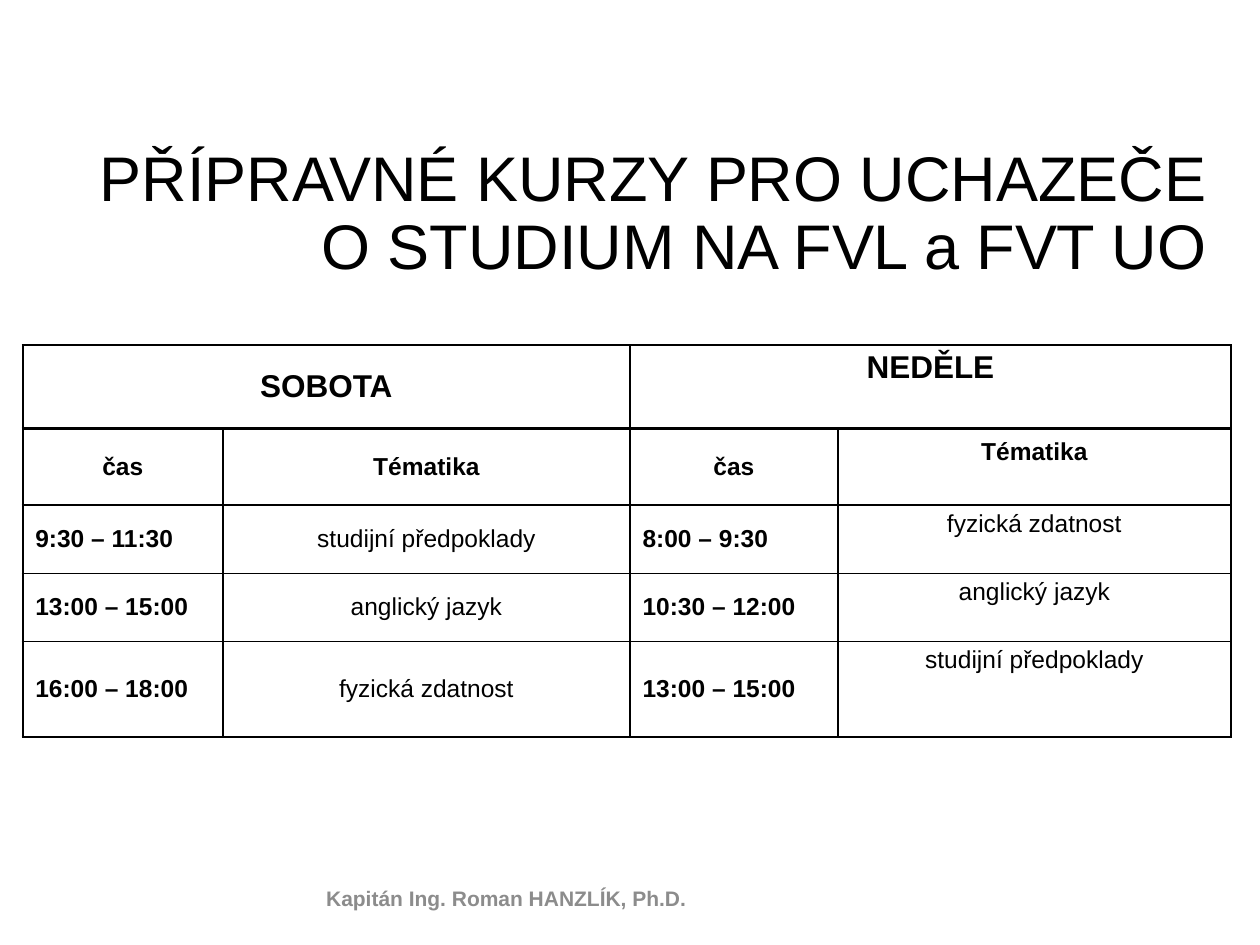
from lxml import etree
from pptx import Presentation
from pptx.dml.color import RGBColor
from pptx.enum import text
from pptx.oxml import ns
from pptx.util import Inches, Pt

FONT = "Arial"
BLACK = "000000"
COLUMNS = [1.59, 3.23, 1.65, 3.12]
ROWS = [0.66, 0.61, 0.54, 0.54, 0.76]
SCHEDULE = [
    ["SOBOTA", "", "NEDĚLE", ""],
    ["čas", "Tématika", "čas", "Tématika"],
    ["9:30 – 11:30", "studijní předpoklady", "8:00 – 9:30", "fyzická zdatnost"],
    ["13:00 – 15:00", "anglický jazyk", "10:30 – 12:00", "anglický jazyk"],
    ["16:00 – 18:00", "fyzická zdatnost", "13:00 – 15:00", "studijní předpoklady"],
]


def color(value):
    return RGBColor.from_string(value)


def style_paragraph(para, size, align, bold=False, shade=BLACK):
    para.alignment = align
    para.font.name = FONT
    para.font.size = Pt(size)
    para.font.bold = bold
    para.font.color.rgb = color(shade)


def place(shape, box):
    shape.left, shape.top, shape.width, shape.height = map(Inches, box)


def add_title(page, box):
    title = page.shapes.title
    place(title, box)
    frame = title.text_frame
    frame.word_wrap = True
    frame.auto_size = text.MSO_AUTO_SIZE.NONE
    frame.vertical_anchor = text.MSO_ANCHOR.BOTTOM
    frame.text = "PŘÍPRAVNÉ KURZY PRO UCHAZEČE O STUDIUM NA FVL a FVT UO"
    para = frame.paragraphs[0]
    style_paragraph(para, 36, text.PP_ALIGN.RIGHT)
    para.line_spacing = 0.9


def set_borders(cell, widths):
    properties = cell._tc.get_or_add_tcPr()
    for index, (side, width) in enumerate(widths.items()):
        line = etree.Element(ns.qn(f"a:ln{side}"), w=str(Pt(width)))
        fill = etree.SubElement(line, ns.qn("a:solidFill"))
        etree.SubElement(fill, ns.qn("a:srgbClr"), val=BLACK)
        properties.insert(index, line)


def fill_cell(cell, wording, row, column):
    cell.fill.solid()
    cell.fill.fore_color.rgb = color("FFFFFF")
    set_borders(cell, {
        "L": 1.5,
        "R": 1.5,
        "T": 1 if row > 2 else 1.5,
        "B": 1 if row in (2, 3) else 1.5,
    })
    if not wording:
        return
    cell.text = wording
    cell.vertical_anchor = text.MSO_ANCHOR.MIDDLE
    if column == 3 or wording == "NEDĚLE":
        cell.vertical_anchor = text.MSO_ANCHOR.TOP
        cell.margin_top = Inches(0.08 if row == 1 else 0.04)
    is_heading = row < 2
    is_time = column in (0, 2)
    align = text.PP_ALIGN.LEFT if is_time and not is_heading else text.PP_ALIGN.CENTER
    style_paragraph(cell.text_frame.paragraphs[0], 18 if row == 0 else 14, align,
                    is_heading or is_time)


def add_schedule(page, box):
    table = page.shapes.add_table(len(ROWS), len(COLUMNS), *map(Inches, box)).table
    table.first_row = table.horz_banding = False
    for column, width in zip(table.columns, COLUMNS):
        column.width = Inches(width)
    for row, height in zip(table.rows, ROWS):
        row.height = Inches(height)
    for first in (0, 2):
        table.cell(0, first).merge(table.cell(0, first + 1))
    for row, entries in enumerate(SCHEDULE):
        for column, wording in enumerate(entries):
            fill_cell(table.cell(row, column), wording, row, column)


def add_author(page, box):
    frame = page.shapes.add_textbox(*map(Inches, box)).text_frame
    frame.word_wrap = True
    frame.vertical_anchor = text.MSO_ANCHOR.MIDDLE
    frame.text = "Kapitán Ing. Roman HANZLÍK, Ph.D."
    style_paragraph(frame.paragraphs[0], 12, text.PP_ALIGN.LEFT, True, "8C8C8C")


def main():
    deck = Presentation()
    deck.slide_width, deck.slide_height = Inches(10), Inches(7.5)
    page = deck.slides.add_slide(deck.slide_layouts[0])
    subtitle = page.placeholders[1].element
    subtitle.getparent().remove(subtitle)
    add_title(page, (0.28, 1.23, 9.4, 1.07))
    add_author(page, (2.49, 6.93, 3.38, 0.4))
    add_schedule(page, (0.18, 2.74, sum(COLUMNS), sum(ROWS)))
    deck.save("out.pptx")


if __name__ == "__main__":
    main()
